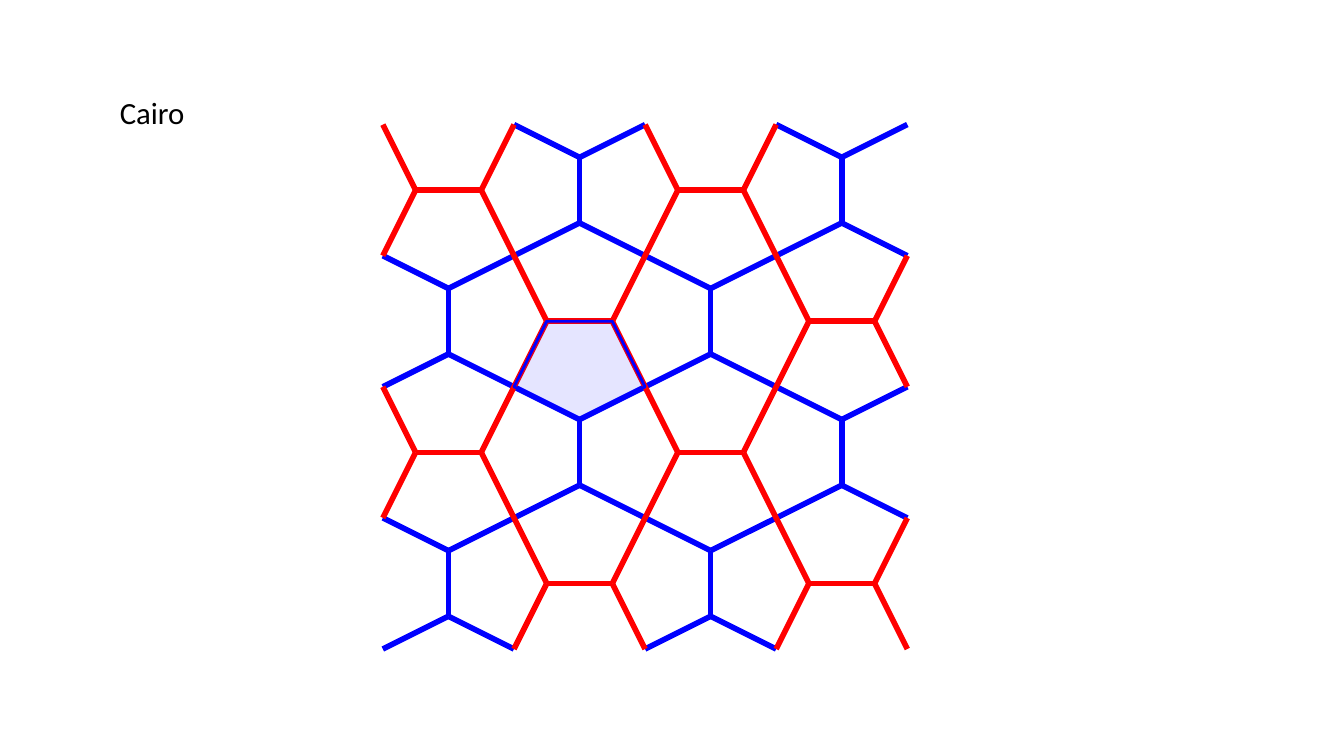
from itertools import product

from lxml.etree import SubElement
from pptx import Presentation
from pptx.dml.color import RGBColor
from pptx.enum.shapes import MSO_CONNECTOR
from pptx.enum.text import MSO_AUTO_SIZE
from pptx.oxml.ns import qn
from pptx.util import Pt

BLUE, RED = "0000FF", "FF0000"
CELLS = 4


def color(value):
    return RGBColor.from_string(value)


def add_title(slide, left, top, width, height):
    box = slide.shapes.add_textbox(Pt(left), Pt(top), Pt(width), Pt(height))
    tf = box.text_frame
    tf.word_wrap = False
    tf.auto_size = MSO_AUTO_SIZE.SHAPE_TO_FIT_TEXT
    r = tf.paragraphs[0].add_run()
    r.text = "Cairo"
    r.font.name = "Calibri"
    r.font.size = Pt(22)
    r.font.color.rgb = color("000000")


def add_edge(slide, start, end, hue):
    line = slide.shapes.add_connector(MSO_CONNECTOR.STRAIGHT, *start, *end)
    line.line.color.rgb = color(hue)
    line.line.width = Pt(4)
    SubElement(line._element.spPr, qn("a:effectLst"))


def cell_hue(row, col):
    return RED if (row + col) % 2 == 0 else BLUE


def arm_ends(row, col, hue):
    ends = []
    for dy, dx in product((-0.5, 0.5), repeat=2):
        cell_row, cell_col = int(row + dy - 0.5), int(col + dx - 0.5)
        inside = 0 <= row + dy < CELLS and 0 <= col + dx < CELLS
        if inside and cell_hue(cell_row, cell_col) == hue:
            shrink_x, shrink_y = (0.5, 1) if hue == RED else (1, 0.5)
            ends.append((col + dx * shrink_x, row + dy * shrink_y))
    return ends


def add_tiling(slide, left, top, size):
    cell = size / CELLS

    def at(x, y):
        return Pt(left + x * cell), Pt(top + y * cell)

    for hue in (BLUE, RED):
        for row, col in product(range(CELLS + 1), repeat=2):
            ends = arm_ends(row, col, hue)
            if len(ends) == 1:
                ends.append((col, row))
            if ends:
                add_edge(slide, at(*ends[0]), at(*ends[1]), hue)
        half_x, half_y = (0.25, 0) if hue == RED else (0, 0.25)
        for row, col in product(range(CELLS), repeat=2):
            if cell_hue(row, col) == hue:
                x, y = col + 0.5, row + 0.5
                add_edge(slide, at(x - half_x, y - half_y), at(x + half_x, y + half_y), hue)

    corners = [(1.5, 2.25), (1, 2), (1.25, 1.5), (1.75, 1.5), (2, 2)]
    points = [at(x, y) for x, y in corners]
    builder = slide.shapes.build_freeform(*points[0])
    builder.add_line_segments(points[1:], close=True)
    sp = builder.convert_to_shape()
    sp.shadow.inherit = False
    sp.fill.solid()
    sp.fill.fore_color.rgb = color(BLUE)
    fill = sp._element.spPr.find(qn("a:solidFill"))
    SubElement(fill[0], qn("a:alpha"), val="10000")
    sp.line.color.rgb = color(BLUE)
    sp.line.width = Pt(2)


def main():
    prs = Presentation()
    prs.slide_width, prs.slide_height = Pt(960), Pt(540)
    slide = prs.slides.add_slide(prs.slide_layouts[6])
    add_title(slide, 78.5, 63.4, 61.2, 33.8)
    add_tiling(slide, 273.5, 89, 374.6)
    prs.save("out.pptx")


if __name__ == "__main__":
    main()
